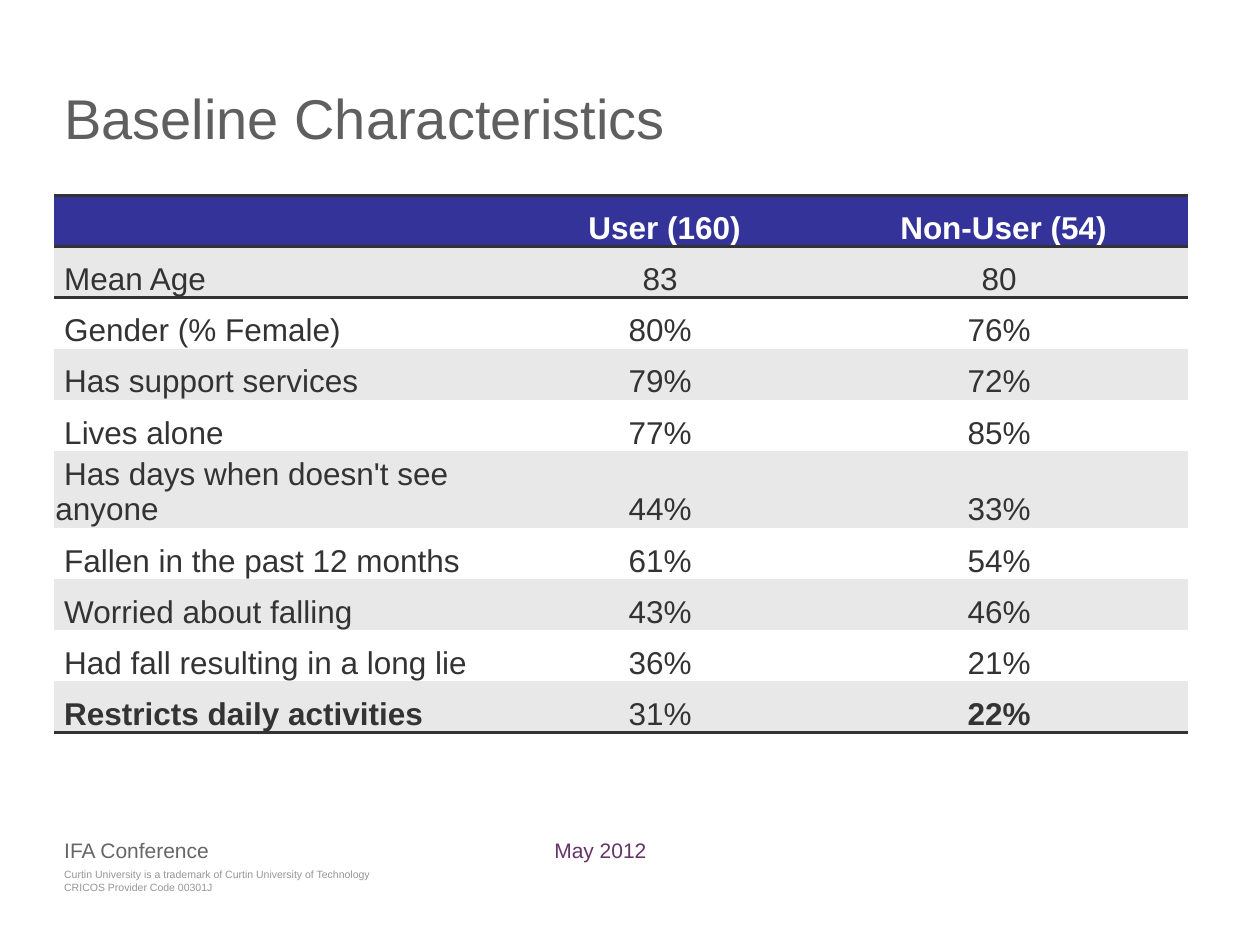
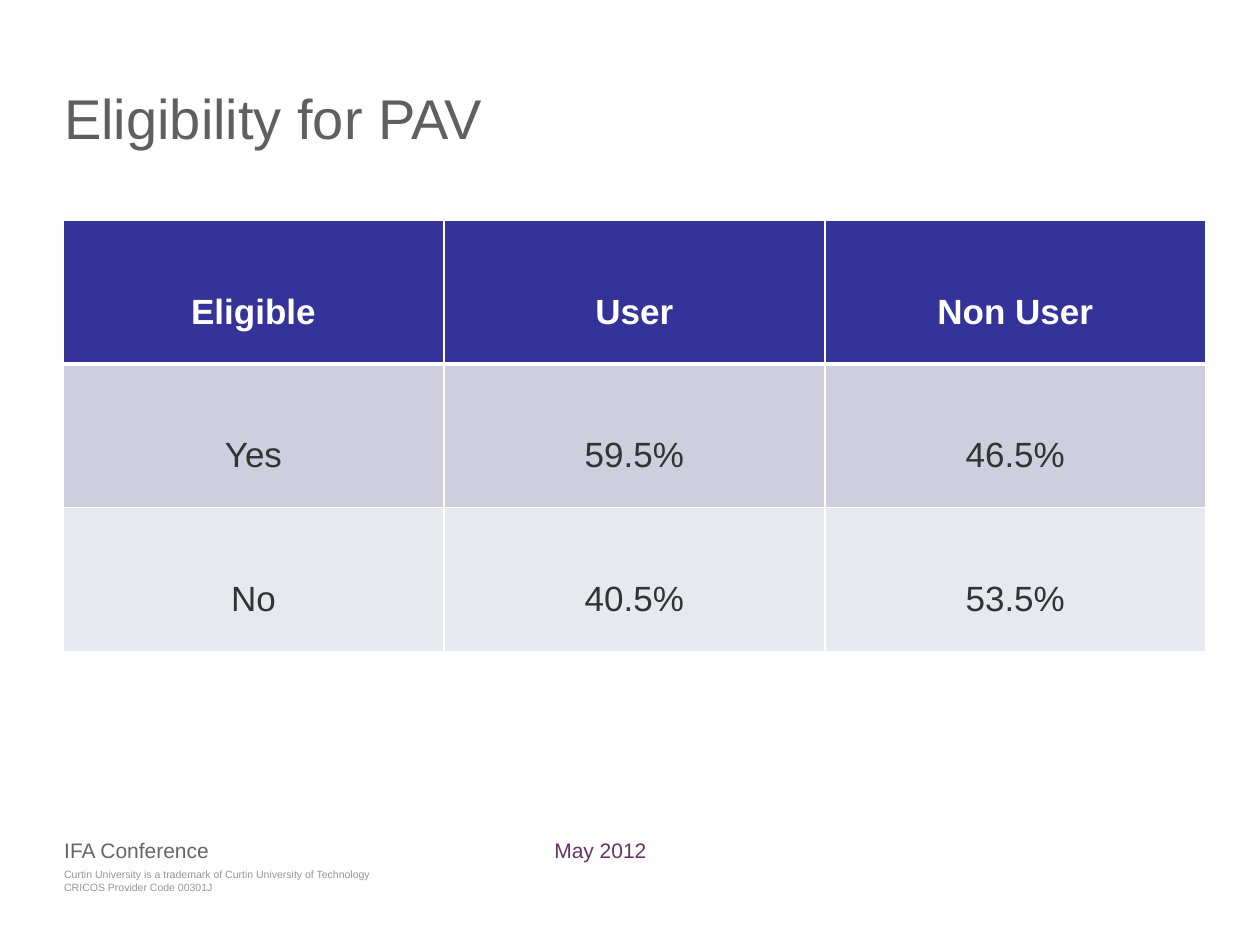
from dataclasses import dataclass

from lxml import etree
from pptx import Presentation
from pptx.dml.color import RGBColor
from pptx.enum import text
from pptx.oxml import ns
from pptx.util import Inches, Pt


@dataclass(frozen=True)
class Theme:
    font: str = "Arial"
    title: str = "5F5F5F"
    event: str = "666666"
    date: str = "663366"
    legal: str = "969696"
    header: str = "333399"
    ink: str = "333333"
    white: str = "FFFFFF"
    grey_band: str = "E8E8E8"
    dark_band: str = "CECEDE"
    light_band: str = "E8E8EF"
    title_size: int = 32
    footer_size: int = 12
    legal_size: int = 6
    baseline_size: int = 18
    eligibility_size: int = 20


THEME = Theme()
PLAIN_TABLE_STYLE = "{2D5ABB26-0587-4C30-8999-92F81FD0307C}"
LEGAL_LINES = [
    "Curtin University is a trademark of Curtin University of Technology",
    "CRICOS Provider Code 00301J",
]
BASELINE_ROWS = [
    ("", "User (160)", "Non-User (54)"),
    ("Mean Age", "83", "80"),
    ("Gender (% Female)", "80%", "76%"),
    ("Has support services", "79%", "72%"),
    ("Lives alone", "77%", "85%"),
    ("Has days when doesn't see anyone", "44%", "33%"),
    ("Fallen in the past 12 months", "61%", "54%"),
    ("Worried about falling", "43%", "46%"),
    ("Had fall resulting in a long lie", "36%", "21%"),
    ("Restricts daily activities", "31%", "22%"),
]
EMPHASISED = {"Restricts daily activities", "22%"}
TWO_LINE_ROW = 5
ELIGIBILITY_ROWS = [
    ("Eligible", "User", "Non User"),
    ("Yes", "59.5%", "46.5%"),
    ("No", "40.5%", "53.5%"),
]


# Text
def set_all(target, formats):
    for name, value in formats.items():
        setattr(target, name, value)


def write(paragraph, words, size, color, bold=False):
    run = paragraph.add_run()
    run.text = words
    set_all(run.font, {"name": THEME.font, "size": Pt(size), "bold": bold})
    run.font.color.rgb = RGBColor.from_string(color)


def add_label(slide, place, lines, size, color, top_inset=0):
    frame = slide.shapes.add_textbox(*map(Inches, place)).text_frame
    set_all(frame, {
        "word_wrap": True, "margin_left": 0, "margin_right": 0,
        "margin_top": Inches(top_inset), "margin_bottom": 0,
    })
    for index, line in enumerate(lines):
        paragraph = frame.add_paragraph() if index else frame.paragraphs[0]
        write(paragraph, line, size, color)


# Tables
def set_borders(cell, edges):
    """Draw edges given as {side: (color, points)}, sides being L, R, T, B."""
    properties = cell._tc.get_or_add_tcPr()
    for side in "LRTB":
        if side in edges:
            color, width = edges[side]
            line = etree.SubElement(properties, ns.qn(f"a:ln{side}"), w=str(Pt(width)))
            fill = etree.SubElement(line, ns.qn("a:solidFill"))
            etree.SubElement(fill, ns.qn("a:srgbClr"), val=color)


def fill_cell(cell, words, size, color, bold, band, edges, cell_format, paragraph_format):
    set_borders(cell, edges)
    cell.fill.solid()
    cell.fill.fore_color.rgb = RGBColor.from_string(band)
    set_all(cell, cell_format)
    paragraph = cell.text_frame.paragraphs[0]
    set_all(paragraph, paragraph_format)
    write(paragraph, words, size, color, bold)
    return paragraph


def add_plain_table(slide, place, widths, heights):
    table = slide.shapes.add_table(len(heights), len(widths), *map(Inches, place)).table
    set_all(table, {"first_row": False, "horz_banding": False})
    table._tbl.tblPr.find(ns.qn("a:tableStyleId")).text = PLAIN_TABLE_STYLE
    for column, width in zip(table.columns, widths):
        column.width = Inches(width)
    for row, height in zip(table.rows, heights):
        row.height = Inches(height)
    return table


def add_baseline_table(slide):
    height, tall = 4.26, 0.61
    last = len(BASELINE_ROWS) - 1
    heights = [tall if row == TWO_LINE_ROW else (height - tall) / last
               for row in range(last + 1)]
    table = add_plain_table(slide, (0.43, 1.55, 9, height), (3.62, 2.38, 3), heights)
    rule = (THEME.ink, 2)
    row_rules = {0: {"T": rule, "B": rule}, 1: {"T": rule}, last: {"B": rule}}
    inset = Inches(0.01)
    cell_format = {
        "vertical_anchor": text.MSO_ANCHOR.BOTTOM, "margin_left": inset,
        "margin_right": inset, "margin_top": inset, "margin_bottom": 0,
    }
    for row, entries in enumerate(BASELINE_ROWS):
        header = row == 0
        band = THEME.header if header else (THEME.white, THEME.grey_band)[row % 2]
        for column, words in enumerate(entries):
            align = text.PP_ALIGN.CENTER if column else text.PP_ALIGN.LEFT
            paragraph = fill_cell(
                table.cell(row, column), words, THEME.baseline_size,
                THEME.white if header else THEME.ink, header or words in EMPHASISED,
                band, row_rules.get(row, {}), cell_format,
                {"alignment": align, "space_after": Pt(0 if header else 6)})
            if header or column == 0:  # only the first line is indented
                paragraph._p.get_or_add_pPr().set("indent", str(Inches(0.07)))


def add_eligibility_table(slide):
    width, height, count = 9.07, 3.42, 3
    table = add_plain_table(slide, (0.5, 1.75, width, height),
                            [width / count] * count, [height / count] * count)
    thin, thick = (THEME.white, 1), (THEME.white, 3)
    bands = (THEME.header, THEME.dark_band, THEME.light_band)
    cell_format = {
        "vertical_anchor": text.MSO_ANCHOR.MIDDLE, "margin_left": Inches(0.08),
        "margin_right": Inches(0.08), "margin_top": 0, "margin_bottom": 0,
    }
    paragraph_format = {"alignment": text.PP_ALIGN.CENTER, "line_spacing": 2.0}
    for row, entries in enumerate(ELIGIBILITY_ROWS):
        header = row == 0
        edges = {"L": thin, "R": thin, "T": thick if row == 1 else thin,
                 "B": thick if header else thin}
        for column, words in enumerate(entries):
            fill_cell(table.cell(row, column), words, THEME.eligibility_size,
                      THEME.white if header else THEME.ink, header,
                      bands[row], edges, cell_format, paragraph_format)


# Shared slide frame
def add_framed_slide(deck, title):
    slide = deck.slides.add_slide(deck.slide_layouts[6])
    add_label(slide, (0.51, 6.89, 3.07, 0.24), LEGAL_LINES, THEME.legal_size, THEME.legal)
    add_label(slide, (0.51, 0.61, 8.98, 1.09), [title], THEME.title_size, THEME.title, 0.05)
    add_label(slide, (4.4, 6.65, 2.33, 0.24), ["May 2012"], THEME.footer_size, THEME.date)
    add_label(slide, (0.51, 6.65, 3.78, 0.24), ["IFA Conference"],
              THEME.footer_size, THEME.event)
    return slide


def main():
    deck = Presentation()
    set_all(deck, {"slide_width": Inches(10), "slide_height": Inches(7.5)})
    add_baseline_table(add_framed_slide(deck, "Baseline Characteristics"))
    add_eligibility_table(add_framed_slide(deck, "Eligibility for PAV"))
    deck.save("out.pptx")


if __name__ == "__main__":
    main()
